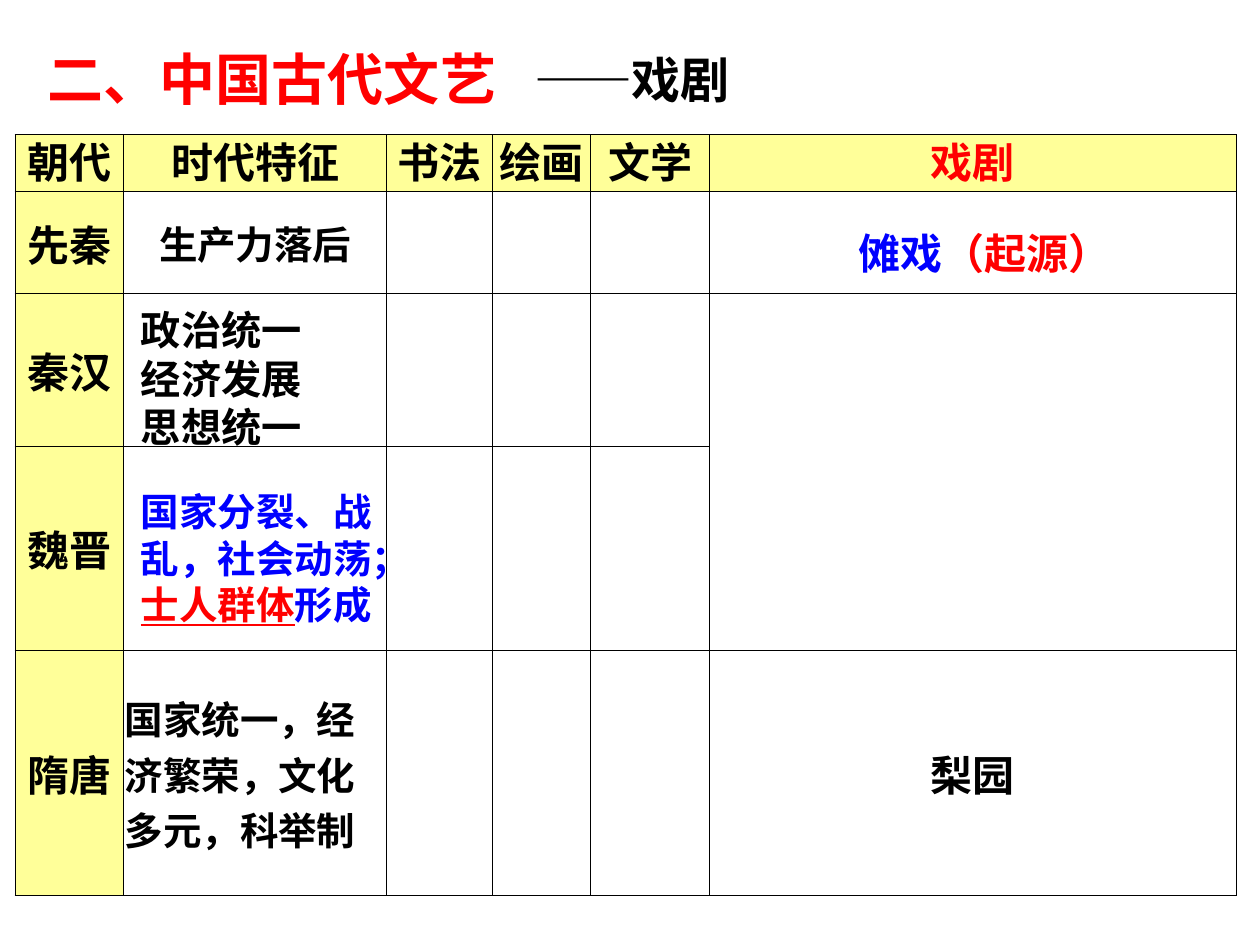
from dataclasses import dataclass

from lxml import etree
from pptx import Presentation
from pptx.dml.color import RGBColor
from pptx.enum import text as t
from pptx.oxml import ns
from pptx.util import Inches, Pt

BLACK = RGBColor(0x00, 0x00, 0x00)
RED = RGBColor(0xFF, 0x00, 0x00)
BLUE = RGBColor(0x00, 0x00, 0xFF)
YELLOW = RGBColor(0xFF, 0xFF, 0x99)
BODY_FONT = "Noto Sans CJK SC"
TITLE_FONT = "Comic Neue"
CENTER = t.PP_ALIGN.CENTER
LEFT = t.PP_ALIGN.LEFT

COLUMN_WIDTHS = [0.86, 2.09, 0.84, 0.78, 0.94, 4.18]
ROW_HEIGHTS = [0.45, 0.81, 1.21, 1.62, 1.95]
HEADERS = ["朝代", "时代特征", "书法", "绘画", "文学", "戏剧"]
DYNASTIES = ["先秦", "秦汉", "魏晋", "隋唐"]


@dataclass
class Span:
    text: str
    color: RGBColor = BLACK
    underline: bool = False


@dataclass
class Note:
    """Text laid over the table or beside the title, one list of spans per paragraph."""
    left: float
    top: float
    width: float
    height: float
    size: float
    paragraphs: list[list[Span]]
    align: t.PP_ALIGN = LEFT


NOTES = [
    Note(1.02, 3.79, 2.05, 1.21, 22,
         [[Span("国家分裂、战乱，社会动荡；", BLUE),
           Span("士人群体", RED, True), Span("形成", BLUE)]]),
    Note(1.02, 2.34, 2.03, 1.26, 23,
         [[Span(line)] for line in ("政治统一", "经济发展", "思想统一")]),
    Note(5.7, 1.72, 4.22, 0.51, 24,
         [[Span("傩戏", BLUE), Span("（起源）", RED)]], CENTER),
    Note(4.14, 0.31, 5.39, 0.57, 28, [[Span("——戏剧")]]),
]


def write(frame, paragraphs: list[list[Span]], *, size: float, font: str = BODY_FONT,
          align: t.PP_ALIGN = LEFT, line_height: float | None = None) -> None:
    for index, spans in enumerate(paragraphs):
        paragraph = frame.add_paragraph() if index else frame.paragraphs[0]
        paragraph.alignment = align
        if line_height:
            paragraph.line_spacing = Pt(line_height)
        for span in spans:
            run = paragraph.add_run()
            run.text = span.text
            run.font.size = Pt(size)
            run.font.bold = True
            run.font.underline = span.underline
            run.font.name = font
            run.font.color.rgb = span.color
            east_asian = etree.SubElement(run.font._element, ns.qn("a:ea"))
            east_asian.set("typeface", font)


def add_borders(cell) -> None:
    properties = cell._tc.get_or_add_tcPr()
    for position, side in enumerate(("lnL", "lnR", "lnT", "lnB")):
        line = etree.Element(ns.qn(f"a:{side}"), w=str(Pt(0.5)))
        fill = etree.SubElement(line, ns.qn("a:solidFill"))
        etree.SubElement(fill, ns.qn("a:srgbClr"), val=str(BLACK))
        properties.insert(position, line)


def fill_cell(cell, text: str, *, size: float = 24, color: RGBColor = BLACK,
              align: t.PP_ALIGN = CENTER, line_height: float | None = None) -> None:
    cell.vertical_anchor = t.MSO_ANCHOR.MIDDLE
    write(cell.text_frame, [[Span(text, color)]], size=size, align=align,
          line_height=line_height)


def add_dynasty_table(slide) -> None:
    table = slide.shapes.add_table(
        len(ROW_HEIGHTS), len(COLUMN_WIDTHS), Inches(0.12), Inches(1.07),
        Inches(sum(COLUMN_WIDTHS)), Inches(sum(ROW_HEIGHTS))).table
    for column, width in zip(table.columns, COLUMN_WIDTHS):
        column.width = Inches(width)
    for row, height in zip(table.rows, ROW_HEIGHTS):
        row.height = Inches(height)
    for row in range(len(ROW_HEIGHTS)):
        for column in range(len(COLUMN_WIDTHS)):
            cell = table.cell(row, column)
            cell.margin_left = cell.margin_right = cell.margin_top = Inches(0.01)
            cell.margin_bottom = 0
            if row == 0 or column == 0:
                cell.fill.solid()
                cell.fill.fore_color.rgb = YELLOW
            else:
                cell.fill.background()
            add_borders(cell)
    table.cell(2, 5).merge(table.cell(3, 5))

    for column, header in enumerate(HEADERS):
        cell = table.cell(0, column)
        fill_cell(cell, header, color=RED if header == "戏剧" else BLACK, line_height=28)
        cell.margin_top = Inches(0.05)
    for row, dynasty in enumerate(DYNASTIES, start=1):
        fill_cell(table.cell(row, 0), dynasty)
    fill_cell(table.cell(1, 1), "生产力落后", size=22)
    fill_cell(table.cell(4, 1), "国家统一，经济繁荣，文化多元，科举制", size=22, align=LEFT)
    fill_cell(table.cell(4, 5), "梨园")


def add_note(slide, note: Note) -> None:
    box = slide.shapes.add_textbox(Inches(note.left), Inches(note.top),
                                   Inches(note.width), Inches(note.height))
    frame = box.text_frame
    frame.word_wrap = True
    frame.margin_top = Inches(0.08)
    frame.margin_bottom = Inches(0.02)
    write(frame, note.paragraphs, size=note.size, align=note.align,
          line_height=round(note.size * 1.21, 1))


def format_title(title) -> None:
    title.left, title.top = Inches(0.28), Inches(0.3)
    title.width, title.height = Inches(7.77), Inches(0.64)
    frame = title.text_frame
    frame.word_wrap = True
    frame.auto_size = t.MSO_AUTO_SIZE.NONE
    frame.vertical_anchor = t.MSO_ANCHOR.MIDDLE
    write(frame, [[Span("二、中国古代文艺", RED)]], size=32, font=TITLE_FONT)


def main() -> None:
    presentation = Presentation()
    presentation.slide_width, presentation.slide_height = Inches(10), Inches(7.5)
    slide = presentation.slides.add_slide(presentation.slide_layouts[5])
    format_title(slide.shapes.title)
    add_dynasty_table(slide)
    for note in NOTES:
        add_note(slide, note)
    presentation.save("out.pptx")


if __name__ == "__main__":
    main()
